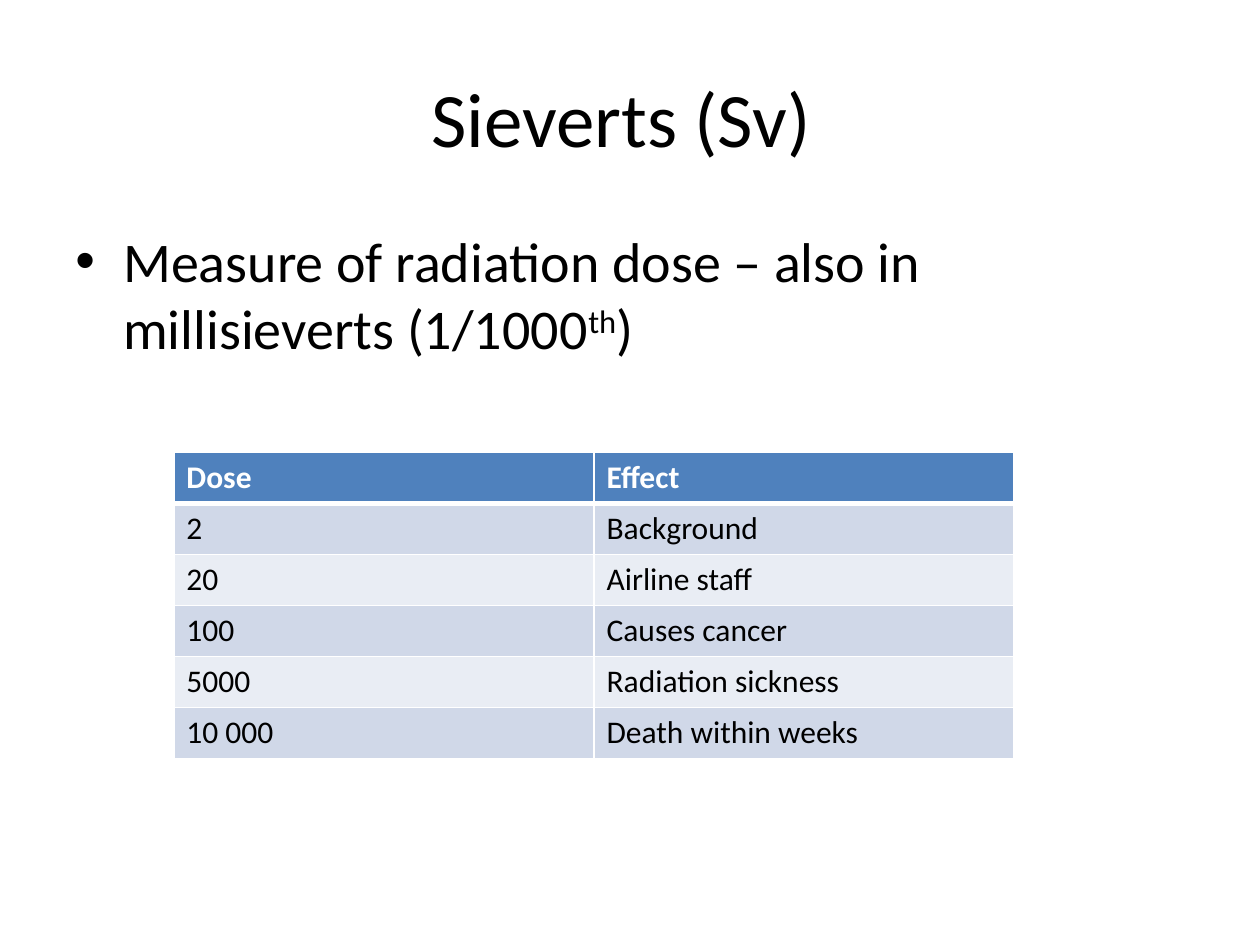
import pptx
import pptx.dml.color
import pptx.enum.text
import pptx.oxml
import pptx.oxml.ns
import pptx.util
from pptx.util import Inches

FONT = "Calibri"
COLORS = {
    "text": "000000",
    "white": "FFFFFF",
    "header": "4F81BD",
    "band_dark": "D0D8E8",
    "band_light": "E9EDF4",
}
DOSES = [
    ("Dose", "Effect"),
    ("2", "Background"),
    ("20", "Airline staff"),
    ("100", "Causes cancer"),
    ("5000", "Radiation sickness"),
    ("10 000", "Death within weeks"),
]


def rgb(name):
    return pptx.dml.color.RGBColor.from_string(COLORS[name])


def add_xml(parent, xml):
    namespace = pptx.oxml.ns.nsdecls("a")
    parent.append(pptx.oxml.parse_xml(xml.replace("/>", f" {namespace}/>", 1)
                                      if xml.count("<") == 1
                                      else xml.replace(">", f" {namespace}>", 1)))


def add_run(paragraph, text, size=18, color="text", bold=False, baseline=None):
    run = paragraph.add_run()
    run.text = text
    run.font.name = FONT
    run.font.size = pptx.util.Pt(size)
    run.font.bold = bold
    run.font.color.rgb = rgb(color)
    if baseline:
        run.font._element.set("baseline", str(baseline * 1000))


def add_text_frame(slide, left, top, width, height, anchor):
    shape = slide.shapes.add_textbox(
        Inches(left), Inches(top), Inches(width), Inches(height))
    frame = shape.text_frame
    frame.word_wrap = True
    frame.vertical_anchor = anchor
    return frame


def add_title(slide, text):
    frame = add_text_frame(slide, 0.5, 0.3, 9, 1.25,
                           pptx.enum.text.MSO_ANCHOR.MIDDLE)
    paragraph = frame.paragraphs[0]
    paragraph.alignment = pptx.enum.text.PP_ALIGN.CENTER
    add_run(paragraph, text, size=44)


def add_bullet(slide, pieces):
    frame = add_text_frame(slide, 0.5, 1.75, 9, 4.95,
                           pptx.enum.text.MSO_ANCHOR.TOP)
    paragraph = frame.paragraphs[0]
    properties = paragraph._p.get_or_add_pPr()
    indent = Inches(0.38)
    properties.set("marL", str(indent))
    properties.set("indent", str(-indent))
    add_xml(properties, '<a:spcBef><a:spcPct val="20000"/></a:spcBef>')
    add_xml(properties, '<a:buFont typeface="Arial"/>')
    add_xml(properties, '<a:buChar char="•"/>')
    for text, baseline in pieces:
        add_run(paragraph, text, size=32, baseline=baseline)


def style_cell(cell, fill, bottom_width):
    cell.fill.solid()
    cell.fill.fore_color.rgb = rgb(fill)
    properties = cell._tc.get_or_add_tcPr()
    widths = {"lnL": 1, "lnR": 1, "lnT": 1, "lnB": bottom_width}
    for position, (side, width) in enumerate(widths.items()):
        line = pptx.oxml.parse_xml(
            f'<a:{side} {pptx.oxml.ns.nsdecls("a")} w="{pptx.util.Pt(width)}">'
            f'<a:solidFill><a:srgbClr val="{COLORS["white"]}"/></a:solidFill>'
            f'</a:{side}>')
        properties.insert(position, line)


def add_dose_table(slide, rows):
    row_height = 0.405
    table = slide.shapes.add_table(
        len(rows), len(rows[0]), Inches(1.38), Inches(3.59),
        Inches(6.67), Inches(row_height * len(rows))).table
    for row_index, row in enumerate(rows):
        header = row_index == 0
        band = "band_dark" if row_index % 2 else "band_light"
        for column_index, text in enumerate(row):
            cell = table.cell(row_index, column_index)
            style_cell(cell, "header" if header else band, 3 if header else 1)
            if row_index == 1:
                cell._tc.tcPr.find(pptx.oxml.ns.qn("a:lnT")).set(
                    "w", str(pptx.util.Pt(3)))
            add_run(cell.text_frame.paragraphs[0], text, bold=header,
                    color="white" if header else "text")


def main():
    presentation = pptx.Presentation()
    presentation.slide_width = Inches(10)
    presentation.slide_height = Inches(7.5)
    slide = presentation.slides.add_slide(presentation.slide_layouts[6])
    add_title(slide, "Sieverts (Sv) ")
    add_bullet(slide, [
        ("Measure of radiation dose – also in millisieverts (1/1000", None),
        ("th", 30),
        (")", None),
    ])
    add_dose_table(slide, DOSES)
    presentation.save("out.pptx")


if __name__ == "__main__":
    main()
